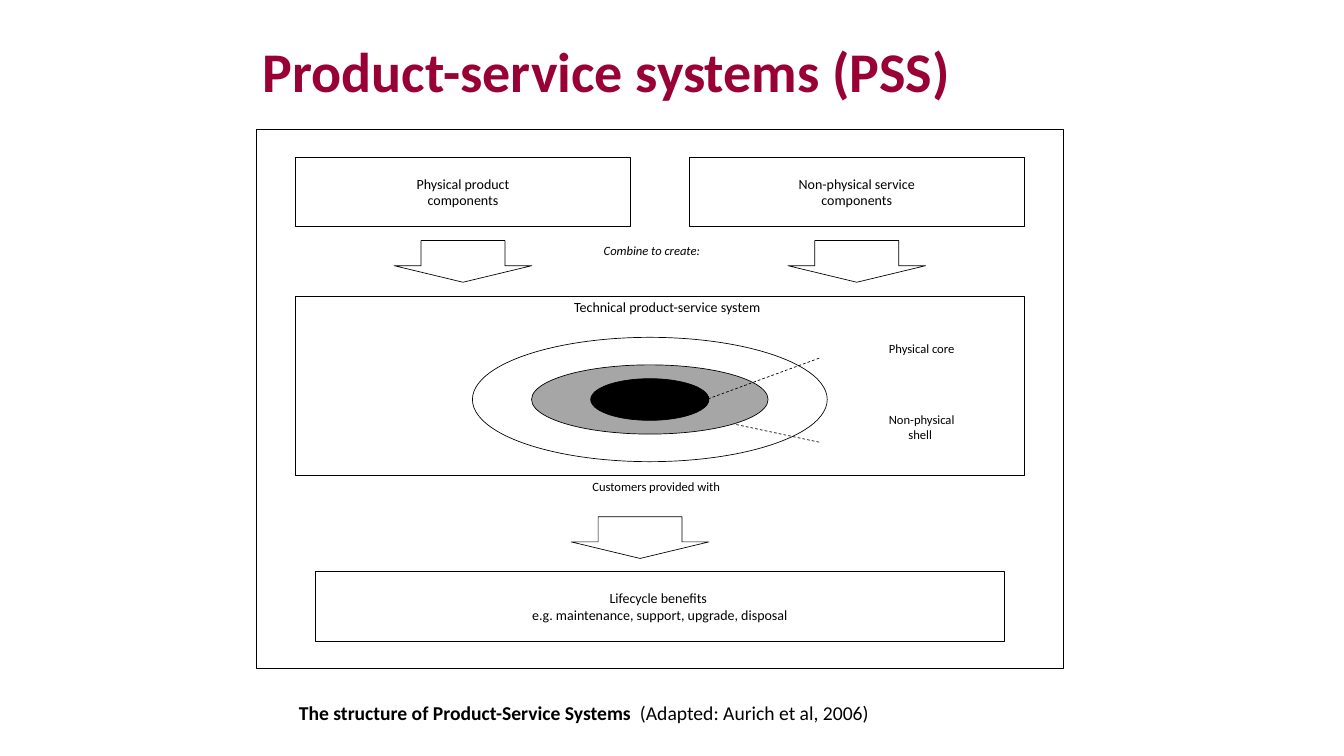
import pptx
import pptx.util
import pptx.dml.color
import pptx.enum.dml
import pptx.enum.shapes
import pptx.enum.text
import pptx.oxml

Inches = pptx.util.Inches
Pt = pptx.util.Pt
RGBColor = pptx.dml.color.RGBColor
Kind = pptx.enum.shapes.MSO_SHAPE
Align = pptx.enum.text.PP_ALIGN
Anchor = pptx.enum.text.MSO_ANCHOR

BLACK = RGBColor(0, 0, 0)
WHITE = RGBColor(255, 255, 255)
GRAY = RGBColor(0xA6, 0xA6, 0xA6)
WINE = RGBColor(0x99, 0, 0x33)

FONT = "Calibri"
NOTE = 13.5
BODY = 15
ROW = 1.03
ARROW = (2.05, 0.62)


def add_run(para, text, size, color=BLACK, bold=False, italic=False):
    run = para.add_run()
    run.text = text
    font = run.font
    font.name, font.size = FONT, Pt(size)
    font.bold, font.italic = bold, italic
    font.color.rgb = color


def add_lines(frame, lines, size, italic=False):
    frame.word_wrap = True
    for i, text in enumerate(lines):
        para = frame.add_paragraph() if i else frame.paragraphs[0]
        para.alignment = Align.CENTER
        add_run(para, text, size, italic=italic)


def add_shape(slide, kind, box, fill=None):
    shape = slide.shapes.add_shape(kind, *map(Inches, box))
    shape.shadow.inherit = False
    if fill is None:
        shape.fill.background()
    else:
        shape.fill.solid()
        shape.fill.fore_color.rgb = fill
    shape.line.color.rgb = BLACK
    shape.line.width = Pt(0.75)
    return shape


def add_box(slide, box, lines):
    frame = add_shape(slide, Kind.RECTANGLE, box).text_frame
    frame.vertical_anchor = Anchor.MIDDLE
    add_lines(frame, lines, BODY)


def add_label(slide, box, lines, size=NOTE, italic=False):
    label = slide.shapes.add_textbox(*map(Inches, box))
    add_lines(label.text_frame, lines, size, italic)


def add_arrow(slide, mid, top):
    width, height = ARROW
    arrow = add_shape(slide, Kind.DOWN_ARROW, (mid - width / 2, top, width, height), WHITE)
    arrow.adjustments[0] = 0.609
    arrow.adjustments[1] = 0.397


def add_leader(slide, start, end):
    line = slide.shapes.add_connector(
        pptx.enum.shapes.MSO_CONNECTOR.STRAIGHT, *map(Inches, start + end))
    line.line.color.rgb = BLACK
    line.line.width = Pt(0.75)
    line.line.dash_style = pptx.enum.dml.MSO_LINE.DASH
    props = line._element.spPr
    props.append(pptx.oxml.parse_xml(
        '<a:effectLst xmlns:a="http://schemas.openxmlformats.org/drawingml/2006/main"/>'))


def add_inputs(slide, box):
    left, top, width, height = box
    part = 4.98
    names = ("Physical product", "Non-physical service")
    for x, name in zip((left, left + width - part), names):
        add_box(slide, (x, top, part, ROW), (name, "components"))
        add_arrow(slide, x + part / 2, top + height - ARROW[1])
    add_label(slide, (left + 3.24, top + 1.23, 4.12, 0.62), ("Combine to create:",), italic=True)


def add_system(slide, box):
    left, top, width, height = box
    add_shape(slide, Kind.RECTANGLE, box)
    add_label(slide, (left + 1.85, top - 0.01, 7.36, 0.66),
              ("Technical product-service system",), BODY)
    mid, center = left + 5.27, top + 1.535
    rings = ((5.28, 1.85, WHITE), (3.52, 1.03, GRAY), (1.76, 0.62, BLACK))
    for wide, high, fill in rings:
        add_shape(slide, Kind.OVAL, (mid - wide / 2, center - high / 2, wide, high), fill)
    side = left + 7.79
    notes = (
        (("Physical core",), 0.61, 0.62, 0.92, (6.07, 1.55)),
        (("Non-physical", "shell "), 1.67, 1, 2.17, (6.52, 1.9)),
    )
    for lines, y, high, start, (end, drop) in notes:
        add_label(slide, (side, top + y, 3.05, high), lines)
        add_leader(slide, (side, top + start), (left + end, top + drop))


def add_result(slide, box):
    left, top, width, height = box
    add_label(slide, (left + 2.34, top, 5.47, 0.62), ("Customers provided with",))
    add_arrow(slide, left + 4.835, top + 0.62)
    add_box(slide, (left, top + height - ROW, width, ROW),
            ("Lifecycle benefits ", "e.g. maintenance, support, upgrade, disposal"))


def add_chart(slide, box):
    left, top, width, height = box
    add_shape(slide, Kind.RECTANGLE, box)
    add_inputs(slide, (left + 0.59, top + 0.41, 10.84, 1.86))
    add_system(slide, (left + 0.59, top + 2.48, 10.85, 2.67))
    add_result(slide, (left + 0.88, top + 5.14, 10.26, 2.47))


def add_title(slide, box):
    frame = slide.shapes.add_textbox(*map(Inches, box)).text_frame
    frame.word_wrap = True
    add_run(frame.paragraphs[0], "Product-service systems (PSS)", 60, WINE, bold=True)


def add_caption(slide, box):
    frame = slide.shapes.add_textbox(*map(Inches, box)).text_frame
    frame.word_wrap = True
    para = frame.paragraphs[0]
    add_run(para, "The structure of Product-Service Systems ", 21, bold=True)
    add_run(para, " (Adapted: Aurich et al, 2006)", 21)


def main():
    deck = pptx.Presentation()
    deck.slide_width, deck.slide_height = Inches(20), Inches(11.25)
    slide = deck.slides.add_slide(deck.slide_layouts[6])
    add_title(slide, (3.81, 0.49, 12.45, 1.11))
    add_chart(slide, (3.81, 1.93, 12.02, 8.02))
    add_caption(slide, (4.35, 10.38, 11.48, 0.45))
    deck.save("out.pptx")


if __name__ == "__main__":
    main()
